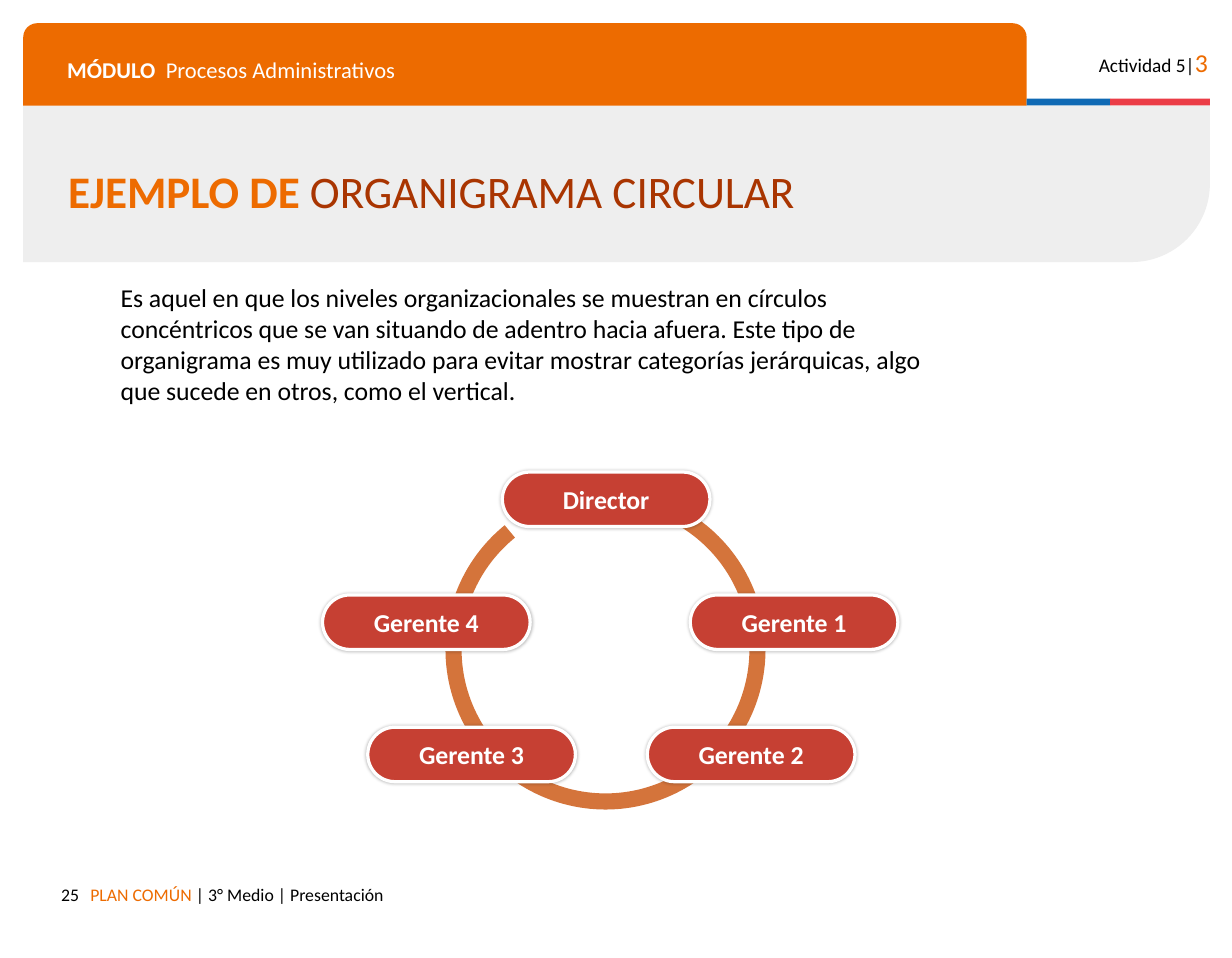
from lxml import etree
from pptx import Presentation
from pptx import util as u
from pptx.dml.color import RGBColor
from pptx.enum import shapes, text
from pptx.oxml import ns

PX = 9144
FONT = "Calibri"
COLORS = {
    "band": "EEEEEE",
    "orange": "ED6B00",
    "blue": "0F69B4",
    "red": "EB3C46",
    "brown": "A93501",
    "ring": "D4743B",
    "node": "C64033",
    "black": "000000",
    "white": "FFFFFF",
}
SHAPE = shapes.MSO_SHAPE
ALIGN = text.PP_ALIGN
ANCHOR = text.MSO_ANCHOR


class SlideBuilder:
    def __init__(self, slide):
        self.slide = slide

    def color(self, name):
        return RGBColor.from_string(COLORS[name])

    def box(self, *lengths):
        return [u.Emu(length * PX) for length in lengths]

    def shape(self, kind, box, fill=None, line=None, width=1, adjustments=()):
        shape = self.slide.shapes.add_shape(kind, *self.box(*box))
        shape.shadow.inherit = False
        for index, value in enumerate(adjustments):
            shape.adjustments[index] = value
        if fill:
            shape.fill.solid()
            shape.fill.fore_color.rgb = self.color(fill)
        else:
            shape.fill.background()
        if line:
            shape.line.color.rgb = self.color(line)
            shape.line.width = u.Pt(width)
        else:
            shape.line.fill.background()
        return shape

    def soft_shadow(self, shape):
        effects = shape._element.spPr.find(ns.qn("a:effectLst"))
        shadow = etree.SubElement(effects, ns.qn("a:outerShdw"),
                                  blurRad=str(u.Pt(2)), dist="0", dir="0")
        tint = etree.SubElement(shadow, ns.qn("a:srgbClr"), val=COLORS["black"])
        etree.SubElement(tint, ns.qn("a:alpha"), val="28000")

    def set_text(self, shape, runs, size, inset=10, align=ALIGN.LEFT,
                 anchor=ANCHOR.TOP, spacing=None):
        frame = shape.text_frame
        frame.word_wrap = True
        frame.vertical_anchor = anchor
        frame.margin_left = frame.margin_right = u.Emu(inset * PX)
        frame.margin_top = frame.margin_bottom = u.Emu(inset * PX)
        paragraph = frame.paragraphs[0]
        paragraph.alignment = align
        if spacing:
            paragraph.line_spacing = spacing
        paragraph.font.name = FONT
        paragraph.font.size = u.Pt(size)
        for words, color, *style in runs:
            run = paragraph.add_run()
            run.text = words
            run.font.color.rgb = self.color(color)
            for value in style:
                if value == "bold":
                    run.font.bold = True
                else:
                    run.font.size = u.Pt(value)

    def text(self, box, runs, size, **layout):
        shape = self.slide.shapes.add_textbox(*self.box(*box))
        self.set_text(shape, runs, size, **layout)

    def node(self, left, top, label):
        shape = self.shape(SHAPE.ROUNDED_RECTANGLE, (left, top, 179, 47),
                           "node", "white", 2, [0.5])
        self.soft_shadow(shape)
        self.set_text(shape, [(label, "white", "bold")], 16, inset=5,
                      align=ALIGN.CENTER, anchor=ANCHOR.MIDDLE)

    def ring(self, box, start, end):
        angles = [degrees * 0.6 for degrees in (start, end)]
        self.shape(SHAPE.ARC, box, line="ring", width=10, adjustments=angles)


def main():
    presentation = Presentation()
    presentation.slide_width = u.Emu(1062 * PX)
    presentation.slide_height = u.Emu(826 * PX)
    slide = presentation.slides.add_slide(presentation.slide_layouts[6])
    builder = SlideBuilder(slide)

    band = builder.shape(SHAPE.ROUND_1_RECTANGLE, (20, 91, 1023, 135),
                         "band", adjustments=[0.5])
    band._element.spPr.get_or_add_xfrm().set("flipV", "1")
    builder.shape(SHAPE.ROUND_2_SAME_RECTANGLE, (20, 20, 865, 71),
                  "orange", adjustments=[0.17, 0])
    builder.shape(SHAPE.RECTANGLE, (885, 85, 72, 6), "blue")
    builder.shape(SHAPE.RECTANGLE, (957, 85, 86, 6), "red")

    builder.text((923, 30, 128, 43),
                 [("Actividad 5|", "black"), ("3", "orange", 16)],
                 12, align=ALIGN.RIGHT)
    builder.text((48, 38, 814, 41),
                 [("MÓDULO", "white", "bold"),
                  ("  Procesos Administrativos", "white")], 14)
    builder.text((68, 753, 715, 35),
                 [("PLAN COMÚN ", "orange"),
                  ("| 3° Medio | Presentación", "black")], 11)
    builder.text((41, 753, 37, 35), [("25", "black")], 11, align=ALIGN.RIGHT)
    builder.text((49, 139, 713, 59),
                 [("EJEMPLO DE ", "orange", "bold"),
                  ("ORGANIGRAMA CIRCULAR", "brown")],
                 28, anchor=ANCHOR.MIDDLE, spacing=0.8)
    builder.text((99, 238, 723, 116),
                 [("Es aquel en que los niveles organizacionales se muestran en "
                   "círculos concéntricos que se van situando de adentro hacia "
                   "afuera. Este tipo de organigrama es muy utilizado para "
                   "evitar mostrar categorías jerárquicas, algo que sucede en "
                   "otros, como el vertical.", "black")], 16, inset=5)

    builder.ring((391, 429, 262, 262), 257, 231)
    for left, top, label in [
        (433, 407, "Director"),
        (595, 513, "Gerente 1"),
        (558, 627, "Gerente 2"),
        (317, 627, "Gerente 3"),
        (278, 513, "Gerente 4"),
    ]:
        builder.node(left, top, label)

    presentation.save("out.pptx")


if __name__ == "__main__":
    main()
